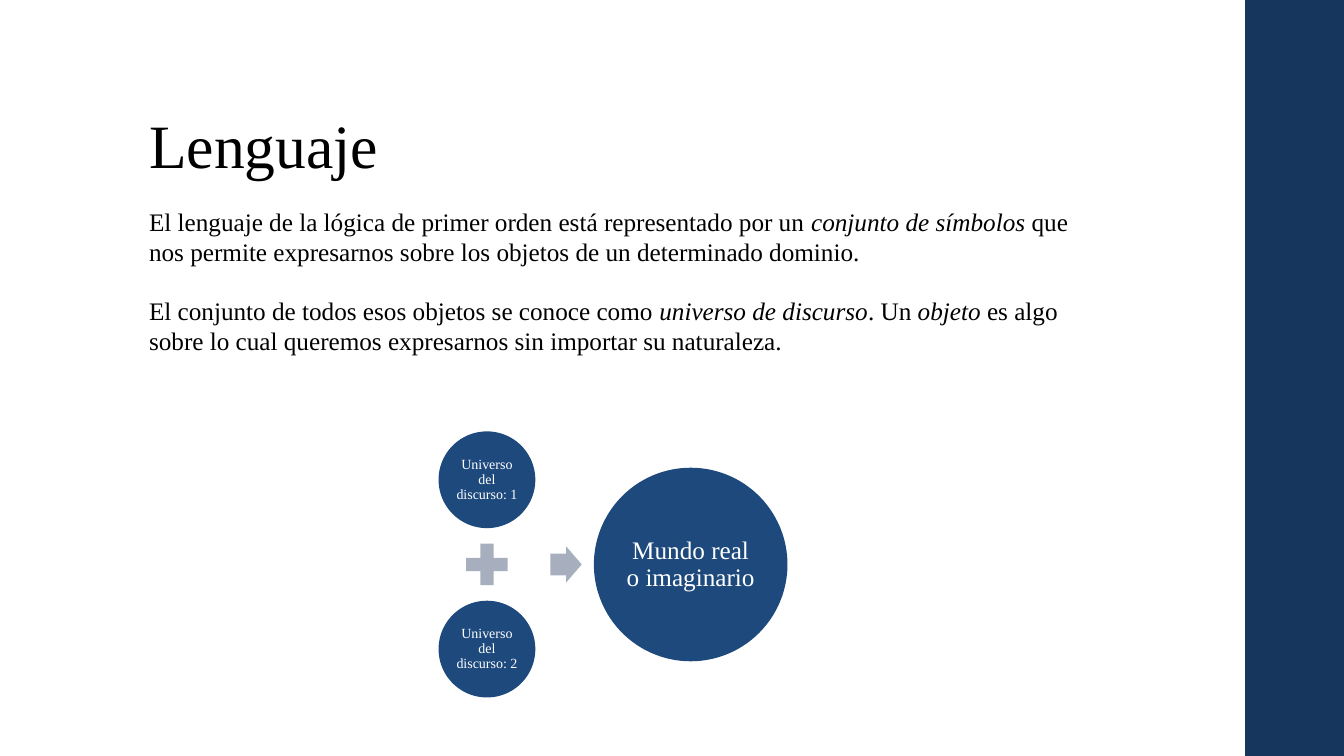
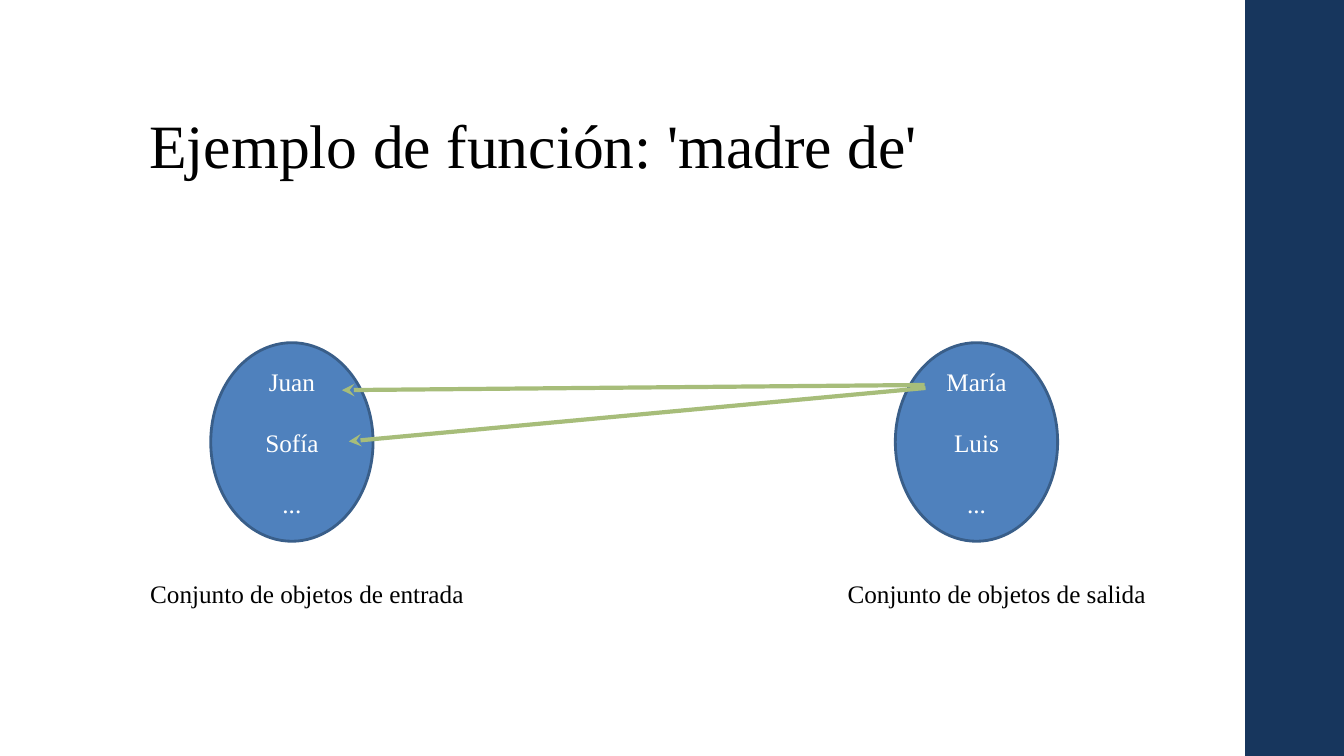
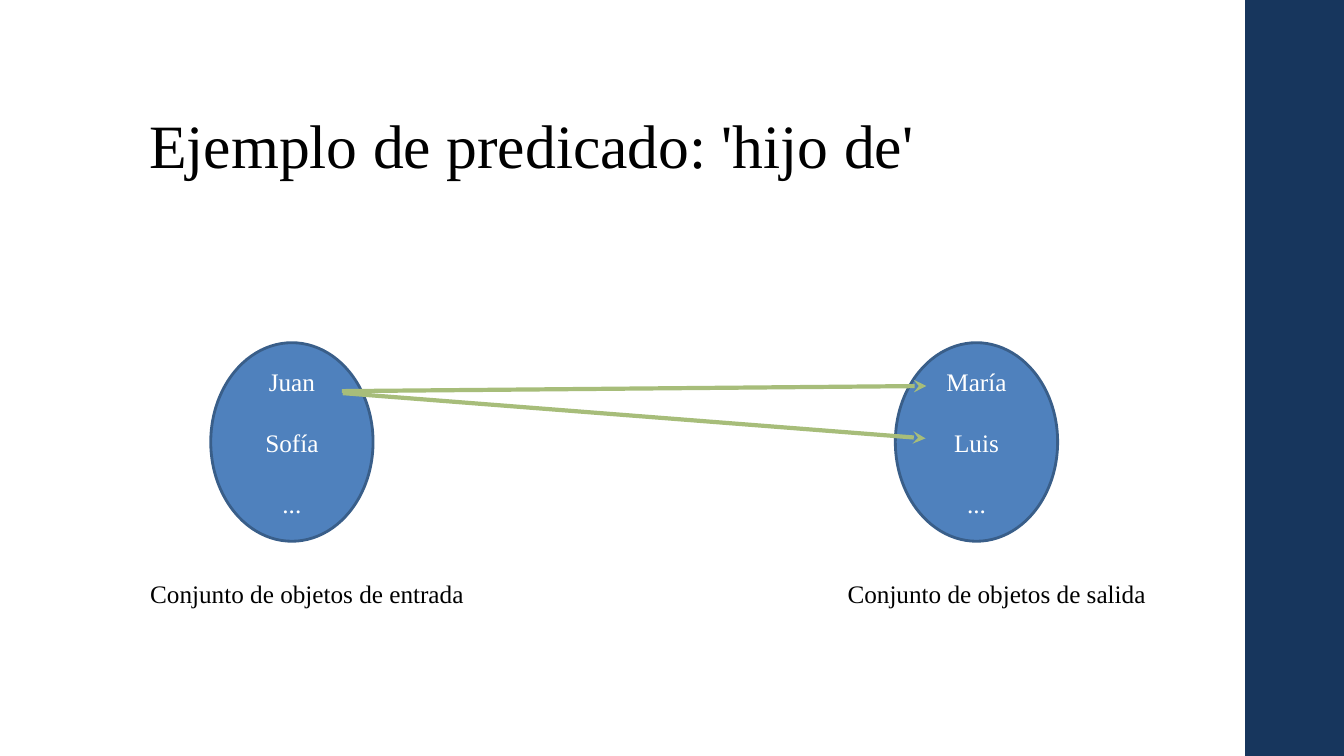
from collections import namedtuple

from lxml import etree
from pptx import Presentation
from pptx import util as u
from pptx.dml.color import RGBColor
from pptx.enum import shapes, text
from pptx.oxml import ns

NAVY = RGBColor(0x17, 0x36, 0x5D)
DEEP_BLUE = RGBColor(0x1D, 0x49, 0x7D)
BLUE = RGBColor(0x4F, 0x81, 0xBD)
BLUE_EDGE = RGBColor(0x39, 0x5E, 0x89)
GREY = RGBColor(0xA7, 0xAF, 0xBE)
GREEN = RGBColor(0xA7, 0xBD, 0x7A)
BLACK = RGBColor(0, 0, 0)
WHITE = RGBColor(0xFF, 0xFF, 0xFF)
FONT = "Times New Roman"
BODY_SIZE = 18

Box = namedtuple("Box", "left top width height")
SLIDE = Box(0, 0, 13.33, 7.5)
BAND = Box(12.35, 0, 1, SLIDE.height)
TITLE = Box(1.38, 0.4, 10.6, 1.45)
BODY = Box(1.38, 2, 9.4, 1.8)
EQUATION = Box(4.35, 4.28, 3.46, 2.64)
MAPPING = Box(2.09, 3.4, 8.4, 1.97)

LANGUAGE = [
    [("El lenguaje de la lógica de primer orden está representado por un ", False),
     ("conjunto de símbolos", True),
     (" que nos permite expresarnos sobre los objetos de un determinado dominio.", False)],
    [("El conjunto de todos esos objetos se conoce como", False),
     (" universo de discurso", True), (". Un ", False), ("objeto ", True),
     ("es algo sobre lo cual queremos expresarnos sin importar su naturaleza.", False)],
]
INPUTS = ["Juan", "Sofía", "..."]
OUTPUTS = ["María", "Luis", "..."]
# Arrow ends (x, y) in percent of the mapping box.
EXAMPLES = [
    ("Ejemplo de función: 'madre de'",
     [((84.3, 21.3), (15.5, 23.9)), ((84.4, 22.8), (16.3, 49.7))]),
    ("Ejemplo de predicado: 'hijo de'",
     [((15.5, 24.4), (84.5, 21.8)), ((15.6, 25.4), (84.4, 48.2))]),
]


def inches(box):
    return [u.Inches(length) for length in box]


def style(paragraph, size, color, align=text.PP_ALIGN.LEFT, spacing=1.0):
    font = paragraph.font
    font.name, font.size, font.color.rgb = FONT, u.Pt(size), color
    paragraph.alignment, paragraph.line_spacing = align, spacing


def set_frame(frame, anchor, inset_x=0.1, inset_y=0.05):
    frame.word_wrap = True
    frame.auto_size = text.MSO_AUTO_SIZE.NONE
    frame.vertical_anchor = anchor
    frame.margin_left = frame.margin_right = u.Inches(inset_x)
    frame.margin_top = frame.margin_bottom = u.Inches(inset_y)


def add_flat(slide, preset, box, fill, edge=None):
    """Add a preset shape without shadow; edge is its line colour, if any."""
    shape = slide.shapes.add_shape(preset, *inches(box))
    shape.shadow.inherit = False
    shape.fill.solid()
    shape.fill.fore_color.rgb = fill
    if edge is None:
        shape.line.fill.background()
    else:
        shape.line.color.rgb, shape.line.width = edge, u.Pt(2)
    return shape


def new_slide(deck, title):
    slide = deck.slides.add_slide(deck.slide_layouts[5])
    add_flat(slide, shapes.MSO_SHAPE.RECTANGLE, BAND, NAVY)
    heading = slide.shapes.title
    heading.left, heading.top, heading.width, heading.height = inches(TITLE)
    heading.text_frame.text = title
    set_frame(heading.text_frame, text.MSO_ANCHOR.BOTTOM)
    style(heading.text_frame.paragraphs[0], 44, BLACK, spacing=0.9)
    return slide


def add_body(slide, box, paragraphs):
    frame = slide.shapes.add_textbox(*inches(box)).text_frame
    set_frame(frame, text.MSO_ANCHOR.TOP)
    for index, runs in enumerate(paragraphs):
        paragraph = frame.add_paragraph() if index else frame.paragraphs[0]
        style(paragraph, BODY_SIZE, BLACK)
        paragraph.space_before = u.Pt(20 if index else 0)
        for words, italic in runs:
            run = paragraph.add_run()
            run.text, run.font.italic = words, italic


def add_equation(slide, box):
    """Two stacked universes, a plus and an arrow to the resulting world."""
    preset = shapes.MSO_SHAPE
    small, plus, large = 0.96, 0.56, 1.92
    middle = box.top + box.height / 2
    circles = [
        ("Universo del discurso: 1", box.left, box.top, small, 10, 0.01),
        ("Universo del discurso: 2", box.left, box.top + box.height - small, small, 10, 0.01),
        ("Mundo real o imaginario", box.left + box.width - large, middle - large / 2,
         large, BODY_SIZE, 0.03),
    ]
    for label, left, top, side, size, inset in circles:
        frame = add_flat(slide, preset.OVAL, Box(left, top, side, side), DEEP_BLUE).text_frame
        frame.text = label
        set_frame(frame, text.MSO_ANCHOR.MIDDLE, inset, inset)
        style(frame.paragraphs[0], size, WHITE, text.PP_ALIGN.CENTER, 0.9)
    cross = add_flat(slide, preset.MATH_PLUS, Box(
        box.left + (small - plus) / 2, middle - plus / 2, plus, plus), GREY)
    cross.adjustments[0] = 0.235
    arrow = add_flat(slide, preset.RIGHT_ARROW, Box(
        box.left + 1.11, middle - 0.18, 0.31, 0.36), GREY)
    arrow.adjustments[0], arrow.adjustments[1] = 0.6, 0.5


def add_set(slide, box, members, caption, caption_shift):
    """An oval listing its members, with a caption below it."""
    frame = add_flat(slide, shapes.MSO_SHAPE.OVAL, box, BLUE, BLUE_EDGE).text_frame
    frame.text = "\n".join(members)
    set_frame(frame, text.MSO_ANCHOR.MIDDLE)
    for index, paragraph in enumerate(frame.paragraphs):
        style(paragraph, BODY_SIZE, WHITE, text.PP_ALIGN.CENTER)
        paragraph.space_before = u.Pt(22 if index else 0)
    width = 4.2
    left = box.left + (box.width - width) / 2 + caption_shift
    below = Box(left, box.top + box.height + 0.32, width, 0.4)
    frame = slide.shapes.add_textbox(*inches(below)).text_frame
    frame.text = caption
    set_frame(frame, text.MSO_ANCHOR.TOP)
    style(frame.paragraphs[0], BODY_SIZE, BLACK, text.PP_ALIGN.CENTER)


def add_arrow(slide, box, start, end):
    ends = [u.Inches(origin + length * share / 100)
            for point in (start, end)
            for origin, length, share in zip(box[:2], box[2:], point)]
    arrow = slide.shapes.add_connector(shapes.MSO_CONNECTOR.STRAIGHT, *ends)
    arrow.line.color.rgb, arrow.line.width = GREEN, u.Pt(3)
    line = arrow.line.fill and arrow.element.spPr.find(ns.qn("a:ln"))
    etree.SubElement(line, ns.qn("a:tailEnd"), type="stealth")
    etree.SubElement(arrow.element.spPr, ns.qn("a:effectLst"))


def add_mapping(slide, box, arrows):
    """Input and output sets at both ends of the box, joined by arrows."""
    width = 1.61
    source = box._replace(width=width)
    target = source._replace(left=box.left + box.width - width)
    add_set(slide, source, INPUTS, "Conjunto de objetos de entrada", 0.15)
    add_set(slide, target, OUTPUTS, "Conjunto de objetos de salida", 0.2)
    for start, end in arrows:
        add_arrow(slide, box, start, end)


def main():
    deck = Presentation()
    deck.slide_width, deck.slide_height = inches(SLIDE)[2:]
    language = new_slide(deck, "Lenguaje")
    add_body(language, BODY, LANGUAGE)
    add_equation(language, EQUATION)
    for title, arrows in EXAMPLES:
        add_mapping(new_slide(deck, title), MAPPING, arrows)
    deck.save("out.pptx")


if __name__ == "__main__":
    main()
